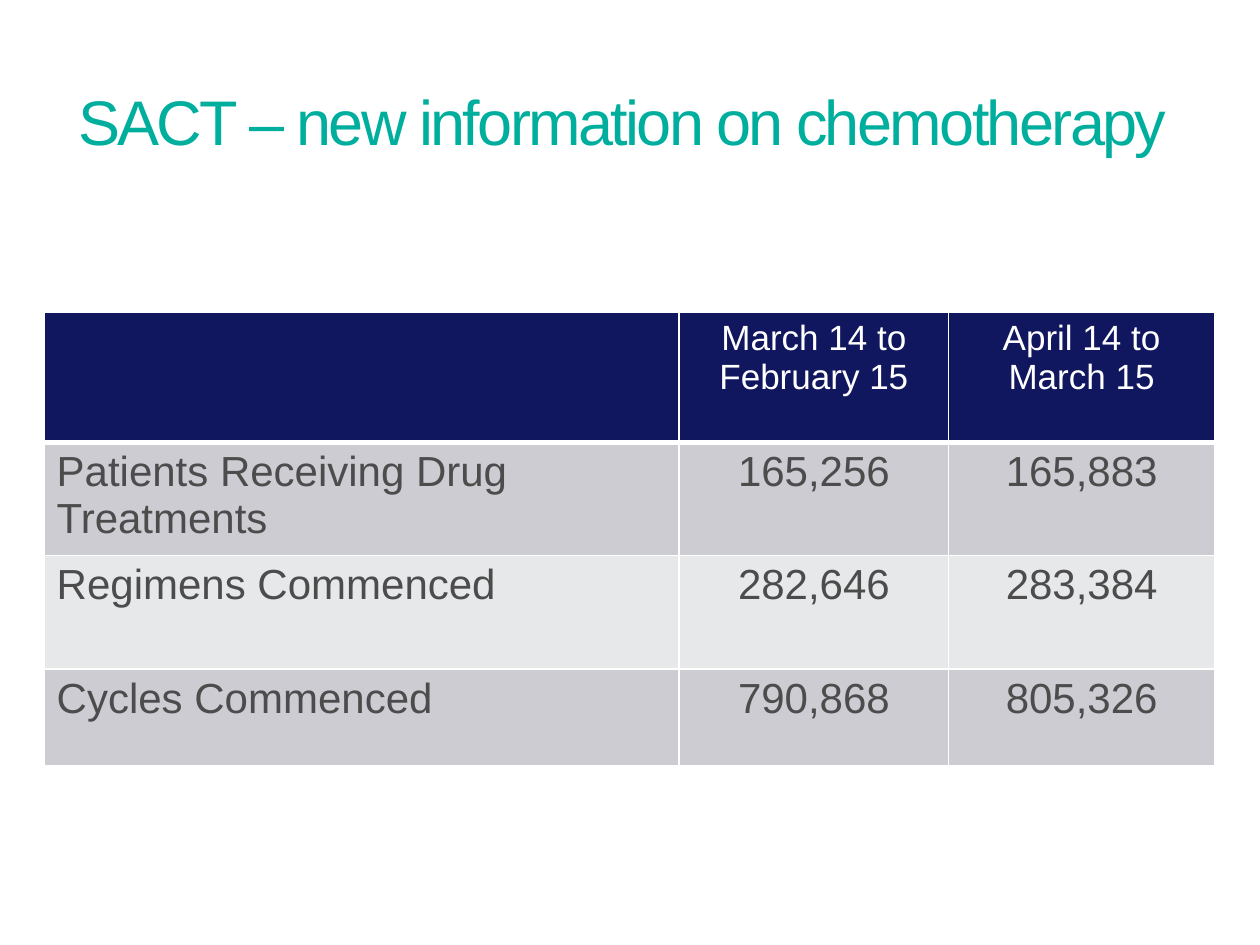
from lxml import etree
from pptx import Presentation
from pptx.dml.color import RGBColor
from pptx.enum import text
from pptx.oxml import ns
from pptx.util import Inches, Pt

TEAL = RGBColor(0x00, 0xAE, 0x9E)
NAVY = RGBColor(0x11, 0x17, 0x5E)
WHITE = RGBColor(0xFF, 0xFF, 0xFF)
GREY_TEXT = RGBColor(0x4C, 0x4C, 0x4C)
BAND_DARK = RGBColor(0xCC, 0xCC, 0xD2)
BAND_LIGHT = RGBColor(0xE7, 0xE8, 0xEA)


def write(frame, words, size, color, align=text.PP_ALIGN.LEFT, spacing=None):
    para = frame.paragraphs[0]
    para.alignment = align
    span = para.add_run()
    span.text = words
    span.font.name = "Arial"
    span.font.size = Pt(size)
    span.font.bold = False
    span.font.color.rgb = color
    if spacing is not None:
        span.font._element.set("spc", str(int(spacing * 100)))


def add_borders(cell, color, **widths):
    """Draw cell edges; widths are points keyed L, R, T, B, in that order."""
    properties = cell._tc.get_or_add_tcPr()
    for index, (side, width) in enumerate(widths.items()):
        line = etree.Element(ns.qn("a:ln" + side), w=str(Pt(width)))
        fill = etree.SubElement(line, ns.qn("a:solidFill"))
        etree.SubElement(fill, ns.qn("a:srgbClr"), val=str(color))
        properties.insert(index, line)


deck = Presentation()
deck.slide_width, deck.slide_height = Inches(10), Inches(7.5)
page = deck.slides.add_slide(deck.slide_layouts[5])

title = page.shapes.title
title.left, title.top = Inches(0.62), Inches(0.6)
title.width, title.height = Inches(8.78), Inches(0.71)
frame = title.text_frame
frame.margin_left = frame.margin_right = frame.margin_top = frame.margin_bottom = 0
frame.vertical_anchor = text.MSO_ANCHOR.MIDDLE
frame.auto_size = text.MSO_AUTO_SIZE.NONE
frame.word_wrap = True
write(frame, "SACT – new information on chemotherapy", 36, TEAL, spacing=-1.5)

rows = [
    ("", "March 14 to February 15", "April 14 to March 15"),
    ("Patients Receiving Drug Treatments", "165,256", "165,883"),
    ("Regimens Commenced", "282,646", "283,384"),
    ("Cycles Commenced", "790,868", "805,326"),
]
column_widths = [5.04, 2.14, 2.11]
row_heights = [1.03, 0.9, 0.9, 0.77]

table = page.shapes.add_table(
    len(rows), len(column_widths), Inches(0.35), Inches(2.48),
    Inches(sum(column_widths)), Inches(sum(row_heights))).table
for column, width in zip(table.columns, column_widths):
    column.width = Inches(width)

for r, (values, height) in enumerate(zip(rows, row_heights)):
    table.rows[r].height = Inches(height)
    header = r == 0
    band = NAVY if header else BAND_DARK if r % 2 else BAND_LIGHT
    for c, value in enumerate(values):
        cell = table.cell(r, c)
        cell.fill.solid()
        cell.fill.fore_color.rgb = band
        if header:
            add_borders(cell, WHITE, L=1, R=1, T=1, B=3)
        if value:
            write(cell.text_frame, value, 20 if header else 24,
                  WHITE if header else GREY_TEXT,
                  align=text.PP_ALIGN.CENTER if c else text.PP_ALIGN.LEFT)

deck.save("out.pptx")
